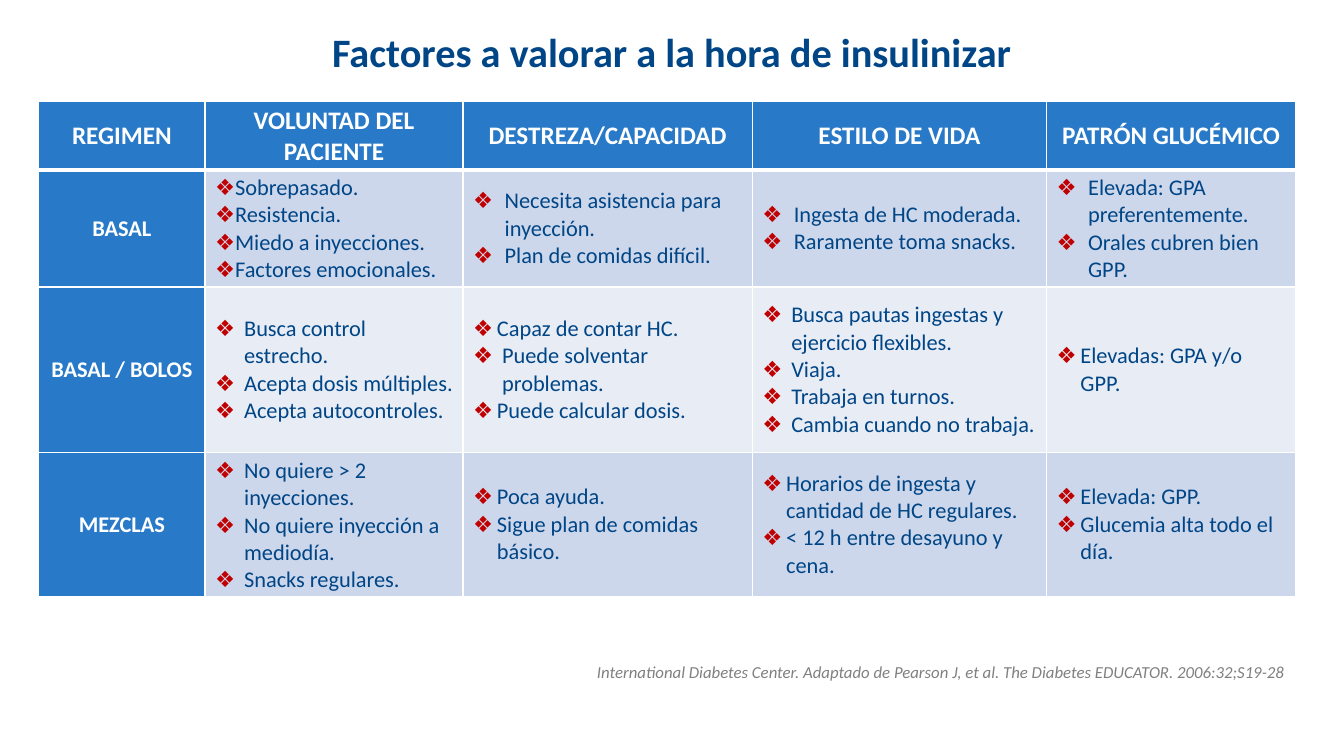
import pptx
import pptx.dml.color
import pptx.enum.text
import pptx.oxml
import pptx.oxml.ns
import pptx.util

Pt = pptx.util.Pt
ALIGN = pptx.enum.text.PP_ALIGN
MIDDLE = pptx.enum.text.MSO_ANCHOR.MIDDLE

TITLE = "Factores a valorar a la hora de insulinizar"
SOURCE = ("International Diabetes Center. Adaptado de Pearson J, et al. "
          "The Diabetes EDUCATOR. 2006:32;S19-28")
HEADINGS = ["REGIMEN", "VOLUNTAD DEL PACIENTE", "DESTREZA/CAPACIDAD",
            "ESTILO DE VIDA", "PATRÓN GLUCÉMICO"]

# Bullet indents in points: (left margin, hanging indent)
WIDE = (22.5, 22.5)
MEDIUM = (20.7, 20.7)
NARROW = (17, 17)
TIGHT = (17, 22.5)
CLOSE = (14.15, 22.5)

# Each regimen has one list of (text, indent) per factor
REGIMENS = [
    ("BASAL", [
        [("Sobrepasado.", CLOSE), ("Resistencia.", CLOSE),
         ("Miedo a inyecciones.", CLOSE), ("Factores emocionales.", CLOSE)],
        [("Necesita asistencia para inyección.", WIDE),
         ("Plan de comidas difícil.", WIDE)],
        [("Ingesta de HC moderada.", WIDE), ("Raramente toma snacks.", WIDE)],
        [("Elevada: GPA preferentemente.", WIDE),
         ("Orales cubren bien GPP.", WIDE)],
    ]),
    ("BASAL / BOLOS", [
        [("Busca control estrecho.", MEDIUM), ("Acepta dosis múltiples.", MEDIUM),
         ("Acepta autocontroles.", MEDIUM)],
        [("Capaz de contar HC.", TIGHT), ("Puede solventar problemas.", MEDIUM),
         ("Puede calcular dosis.", TIGHT)],
        [("Busca pautas ingestas y ejercicio flexibles.", MEDIUM),
         ("Viaja.", MEDIUM), ("Trabaja en turnos.", MEDIUM),
         ("Cambia cuando no trabaja.", MEDIUM)],
        [("Elevadas: GPA y/o GPP.", NARROW)],
    ]),
    ("MEZCLAS", [
        [("No quiere > 2 inyecciones.", MEDIUM),
         ("No quiere inyección a mediodía.", MEDIUM),
         ("Snacks regulares.", MEDIUM)],
        [("Poca ayuda.", NARROW), ("Sigue plan de comidas básico.", NARROW)],
        [("Horarios de ingesta y cantidad de HC regulares.", NARROW),
         ("< 12 h entre desayuno y cena.", NARROW)],
        [("Elevada: GPP.", NARROW), ("Glucemia alta todo el día.", NARROW)],
    ]),
]

COLORS = {"navy": "004586", "blue": "287AC8", "band": "CDD7EB", "pale": "E8ECF5",
          "white": "FFFFFF", "bullet": "C00000", "gray": "808080"}
COLUMN_WIDTHS = [118.8, 184.3, 206.6, 210.2, 178]
ROW_HEIGHTS = [48.5, 83.5, 118.5, 102.5]


def rgb(name):
    return pptx.dml.color.RGBColor.from_string(COLORS[name])


def style(paragraph, size, color, bold=False, italic=False, align=ALIGN.LEFT):
    paragraph.alignment = align
    font = paragraph.font
    font.name, font.size, font.bold, font.italic = "Calibri", Pt(size), bold, italic
    font.color.rgb = rgb(color)


def add_line(slide, text, left, top, width, height, **look):
    frame = slide.shapes.add_textbox(Pt(left), Pt(top), Pt(width), Pt(height)).text_frame
    frame.word_wrap = True
    frame.vertical_anchor = MIDDLE
    frame.paragraphs[0].text = text
    style(frame.paragraphs[0], **look)


def add_bullet(paragraph, indent):
    margin, hang = indent
    properties = paragraph._p.get_or_add_pPr()
    properties.set("marL", str(Pt(margin)))
    properties.set("indent", str(-Pt(hang)))
    namespace = pptx.oxml.ns.nsdecls("a")
    for xml in (f'<a:buClr {namespace}><a:srgbClr val="{COLORS["bullet"]}"/></a:buClr>',
                f'<a:buFont {namespace} typeface="Calibri"/>',
                f'<a:buChar {namespace} char="❖"/>'):
        properties.append(pptx.oxml.parse_xml(xml))


def prepare_cell(cell, fill, top=1, bottom=1):
    """Set margins, white borders (top and bottom widths in points) and fill."""
    cell.vertical_anchor = MIDDLE
    cell.margin_top = cell.margin_bottom = Pt(3)
    properties = cell._tc.get_or_add_tcPr()
    for side, width in (("L", 1), ("R", 1), ("T", top), ("B", bottom)):
        properties.append(pptx.oxml.parse_xml(
            f'<a:ln{side} {pptx.oxml.ns.nsdecls("a")} w="{Pt(width)}"><a:solidFill>'
            f'<a:srgbClr val="{COLORS["white"]}"/></a:solidFill></a:ln{side}>'))
    cell.fill.solid()
    cell.fill.fore_color.rgb = rgb(fill)


def fill_label(cell, text, size, **borders):
    prepare_cell(cell, "blue", **borders)
    label = cell.text_frame.paragraphs[0]
    label.text = text
    style(label, size, "white", bold=True, align=ALIGN.CENTER)


def fill_factors(cell, factors, fill, **borders):
    prepare_cell(cell, fill, **borders)
    frame = cell.text_frame
    for number, (text, indent) in enumerate(factors):
        factor = frame.add_paragraph() if number else frame.paragraphs[0]
        factor.text = text
        add_bullet(factor, indent)
        style(factor, 16, "navy")


def add_regimen_table(slide):
    table = slide.shapes.add_table(
        len(ROW_HEIGHTS), len(COLUMN_WIDTHS), Pt(27.7), Pt(72.3),
        Pt(sum(COLUMN_WIDTHS)), Pt(sum(ROW_HEIGHTS))).table
    for column, width in zip(table.columns, COLUMN_WIDTHS):
        column.width = Pt(width)
    for row, height in zip(table.rows, ROW_HEIGHTS):
        row.height = Pt(height)
    for column, heading in enumerate(HEADINGS):
        fill_label(table.cell(0, column), heading, 18, bottom=3)
    for row, (regimen, factor_lists) in enumerate(REGIMENS, start=1):
        top = 3 if row == 1 else 1
        fill_label(table.cell(row, 0), regimen, 16, top=top)
        for column, factors in enumerate(factor_lists, start=1):
            fill_factors(table.cell(row, column), factors,
                         "band" if row % 2 else "pale", top=top)


def main():
    deck = pptx.Presentation()
    deck.slide_width, deck.slide_height = Pt(960), Pt(540)
    slide = deck.slides.add_slide(deck.slide_layouts[6])
    add_line(slide, TITLE, 48, 13, 864, 47.5,
             size=28.8, color="navy", bold=True, align=ALIGN.CENTER)
    add_regimen_table(slide)
    add_line(slide, SOURCE, 16, 468, 909, 23,
             size=12, color="gray", italic=True, align=ALIGN.RIGHT)
    deck.save("out.pptx")


if __name__ == "__main__":
    main()
